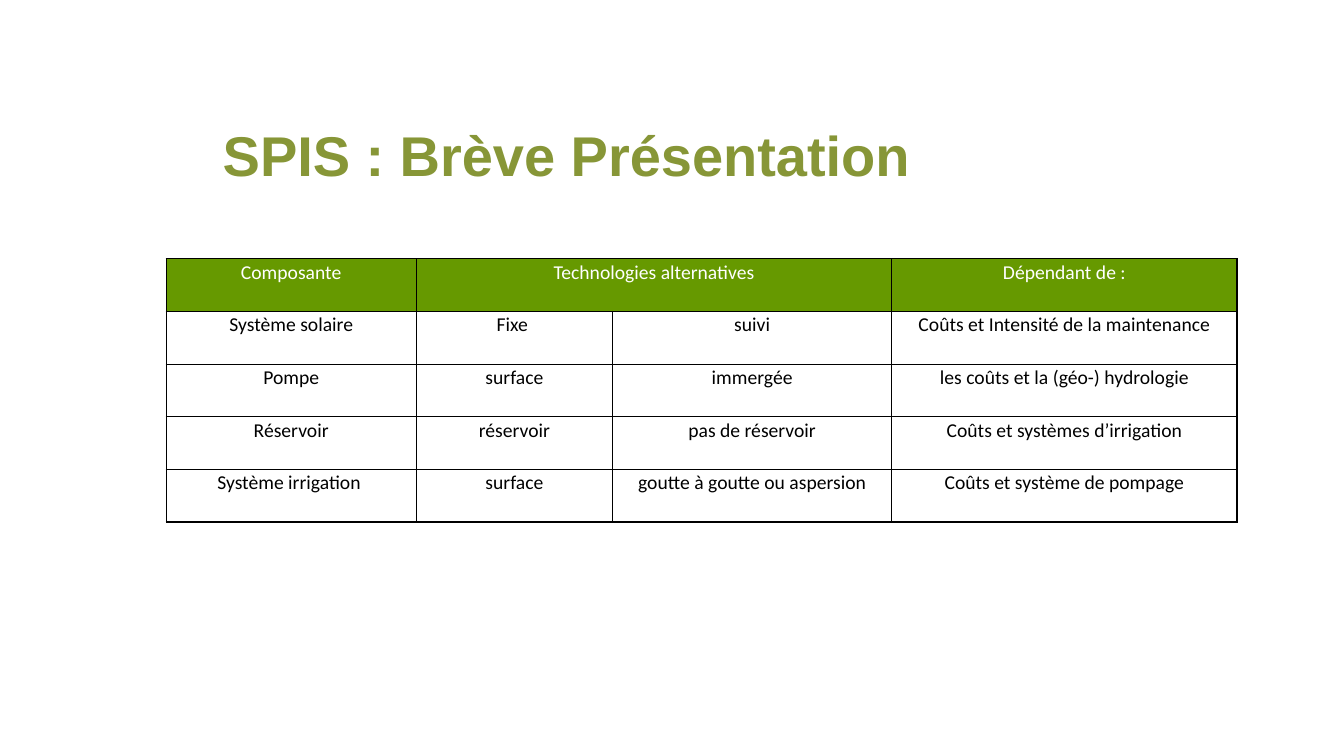
from lxml import etree
from pptx import Presentation
from pptx.dml.color import RGBColor
from pptx.enum.text import MSO_ANCHOR, PP_ALIGN
from pptx.oxml.ns import qn
from pptx.util import Pt

CENTER = PP_ALIGN.CENTER
TOP, MIDDLE = MSO_ANCHOR.TOP, MSO_ANCHOR.MIDDLE
OLIVE = RGBColor(0x87, 0x96, 0x37)
GREEN = RGBColor(0x66, 0x99, 0x00)
WHITE = RGBColor(0xFF, 0xFF, 0xFF)
BLACK = RGBColor(0, 0, 0)

COL_WIDTHS = [178.7, 140.2, 199.5, 246.6]
ROW_HEIGHT = 37.6
ROWS = [
    ["Composante", "Technologies alternatives", "", "Dépendant de :"],
    ["Système solaire", "Fixe ", "suivi", "Coûts et Intensité de la maintenance"],
    ["Pompe", "surface", "immergée", "les coûts et la (géo-) hydrologie"],
    ["Réservoir", "réservoir", "pas de réservoir", "Coûts et systèmes d’irrigation"],
    ["Système irrigation ", "surface", "goutte à goutte ou aspersion", "Coûts et système de pompage"],
]


def add_borders(cell):
    tc_pr = cell._tc.get_or_add_tcPr()
    for side in ("lnL", "lnR", "lnT", "lnB"):
        ln = etree.SubElement(tc_pr, qn(f"a:{side}"), w=str(Pt(1)))
        fill = etree.SubElement(ln, qn("a:solidFill"))
        etree.SubElement(fill, qn("a:srgbClr"), val=str(BLACK))


def format_text(p, font_name, size, color, line_spacing):
    p.line_spacing = line_spacing
    for r in p.runs:
        r.font.name = font_name
        r.font.size = Pt(size)
        r.font.color.rgb = color


prs = Presentation()
prs.slide_width, prs.slide_height = Pt(960), Pt(540)
s = prs.slides.add_slide(prs.slide_layouts[6])

# Title
title = s.shapes.add_textbox(Pt(155.5), Pt(53.3), Pt(738.7), Pt(104.4))
tf = title.text_frame
tf.word_wrap = True
tf.vertical_anchor = MIDDLE
tf.margin_left = tf.margin_right = tf.margin_top = tf.margin_bottom = Pt(3.6)
tf.text = "SPIS : Brève Présentation"
format_text(tf.paragraphs[0], "Arial", 40, OLIVE, 1.2)
tf.paragraphs[0].runs[0].font.bold = True

# Component table
table = s.shapes.add_table(len(ROWS), len(COL_WIDTHS), Pt(118.7), Pt(184.9),
                           Pt(sum(COL_WIDTHS)), Pt(ROW_HEIGHT * len(ROWS))).table
table.first_row = table.horz_banding = False
for column, width in zip(table.columns, COL_WIDTHS):
    column.width = Pt(width)
for row in table.rows:
    row.height = Pt(ROW_HEIGHT)

for i, texts in enumerate(ROWS):
    for j, text in enumerate(texts):
        cell = table.cell(i, j)
        add_borders(cell)
        if i == 0:
            cell.fill.solid()
            cell.fill.fore_color.rgb = GREEN
        else:
            cell.fill.background()
        cell.margin_left = cell.margin_right = Pt(5)
        cell.margin_top = cell.margin_bottom = Pt(0)
        cell.vertical_anchor = TOP
        cell.text = text
        p = cell.text_frame.paragraphs[0]
        p.alignment = CENTER
        format_text(p, "Calibri", 14, WHITE if i == 0 else BLACK, 1.07)
table.cell(0, 1).merge(table.cell(0, 2))

prs.save("out.pptx")
